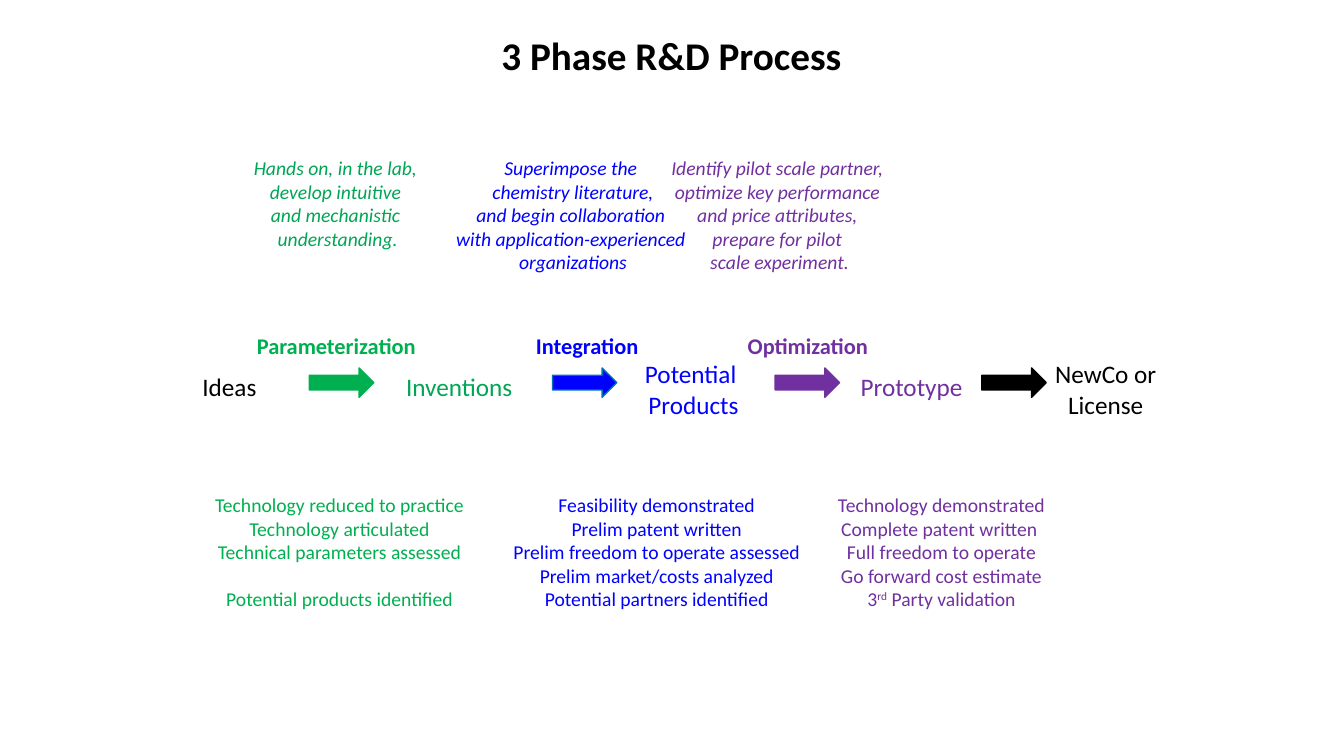
import dataclasses

import pptx
import pptx.dml.color
import pptx.enum.shapes
import pptx.enum.text
import pptx.oxml
import pptx.oxml.ns
import pptx.util

Pt = pptx.util.Pt
ALIGN = pptx.enum.text.PP_ALIGN
ANCHOR = pptx.enum.text.MSO_ANCHOR


@dataclasses.dataclass(frozen=True)
class Theme:
    font: str = "Calibri"
    black: str = "000000"
    green: str = "00B050"
    teal: str = "00A555"
    blue: str = "0000FF"
    edge: str = "0070C0"
    purple: str = "7030A0"
    title: int = 28
    stage: int = 18
    phase: int = 16
    note: int = 14


THEME = Theme()


def paint(color):
    return pptx.dml.color.RGBColor.from_string(color)


# Text: each line is a string or a tuple of runs; "^" raises a run
def write(frame, lines, size, color, align=ALIGN.CENTER, bold=False,
          italic=False, wrap=False, gap=0):
    """Fill a frame; gap is the space above its last line."""
    frame.word_wrap = wrap
    frame.auto_size = pptx.enum.text.MSO_AUTO_SIZE.NONE
    frame.vertical_anchor = ANCHOR.TOP
    for i, line in enumerate(lines):
        para = frame.paragraphs[0] if i == 0 else frame.add_paragraph()
        para.alignment = align
        last = i == len(lines) - 1
        para.space_before = Pt(gap if last else 0)
        for part in (line,) if isinstance(line, str) else line:
            run = para.add_run()
            run.text = part.lstrip("^")
            font = run.font
            font.name, font.size = THEME.font, Pt(size)
            font.bold, font.italic = bold, italic
            font.color.rgb = paint(color)
            if part.startswith("^"):
                run._r.get_or_add_rPr().set("baseline", "30000")


def place(shape, left, top, width, height):
    shape.left, shape.top = Pt(left), Pt(top)
    shape.width, shape.height = Pt(width), Pt(height)


def add_text(slide, box, lines, size, color, **style):
    shape = slide.shapes.add_textbox(*(Pt(n) for n in box))
    write(shape.text_frame, lines, size, color, **style)


def add_arrow(slide, left, color, edge):
    kind = pptx.enum.shapes.MSO_SHAPE.RIGHT_ARROW
    arrow = slide.shapes.add_shape(kind, Pt(left), Pt(262.8), Pt(46), Pt(21))
    arrow.shadow.inherit = False
    arrow.fill.solid()
    arrow.fill.fore_color.rgb = paint(color)
    arrow.line.color.rgb = paint(edge)
    arrow.line.width = Pt(1)


def set_title(slide, text):
    title = slide.shapes.title
    place(title, 121.7, 22.3, 715.7, 20.2)
    write(title.text_frame, [text], THEME.title, THEME.black,
          bold=True, wrap=True)
    title.text_frame.paragraphs[0].line_spacing = 0.9


def set_list(holder, left, width, lines, color, gap=0):
    place(holder, left, 348.5, width, 92)
    write(holder.text_frame, lines, THEME.note, color, gap=gap)
    # Plain lines: no bullet and no indent
    for para in holder.text_frame.paragraphs:
        props = para._p.get_or_add_pPr()
        props.set("marL", "0")
        props.set("indent", "0")
        props.append(pptx.oxml.parse_xml(
            f"<a:buNone {pptx.oxml.ns.nsdecls('a')}/>"))


# Content: left, width, lines, colour
NOTES = [
    (173.5, 135.4, ["Hands on, in the lab, ", "develop intuitive ",
                    "and mechanistic ", "understanding."], THEME.teal),
    (317.5, 183.6, ["Superimpose the ", "chemistry literature,",
                    "and begin collaboration ",
                    "with application-experienced ", "organizations"],
     THEME.blue),
    (471.6, 170.6, ["Identify pilot scale partner, ",
                    "optimize key performance ", "and price attributes, ",
                    "prepare for pilot ", "scale experiment."],
     THEME.purple),
]
PHASES = [
    (176.4, 129.6, ["Parameterization"], THEME.green),
    (375.8, 88.6, ["Integration"], THEME.blue),
    (527, 101.5, ["Optimization"], THEME.purple),
]
STAGES = [
    (137.5, 53.3, ["Ideas"], THEME.black),
    (283, 91.4, ["Inventions"], THEME.teal),
    (452.9, 85, ["Potential ", "Products"], THEME.blue),
    (607.7, 87.8, ["Prototype"], THEME.purple),
    (745.9, 87.8, ["NewCo or", "License"], THEME.black),
]
ARROWS = [
    (221, THEME.green, THEME.green),
    (394.6, THEME.blue, THEME.edge),
    (553.7, THEME.purple, THEME.purple),
    (701.3, THEME.black, THEME.black),
]
RESULTS = [
    (145.4, 194.4, ["Technology reduced to practice",
                    "Technology articulated",
                    "Technical parameters assessed",
                    "Potential products identified"], THEME.green, 17),
    (358.6, 221, ["Feasibility demonstrated", "Prelim patent written",
                  "Prelim freedom to operate assessed",
                  "Prelim market/costs analyzed",
                  "Potential partners identified"], THEME.blue),
    (590.4, 164.2, ["Technology demonstrated", "Complete patent written ",
                    "Full freedom to operate", "Go forward cost estimate",
                    ("3", "^rd", " Party validation")], THEME.purple),
]


def main():
    deck = pptx.Presentation()
    deck.slide_width, deck.slide_height = Pt(960), Pt(540)
    slide = deck.slides.add_slide(deck.slide_layouts.get_by_name("Comparison"))
    set_title(slide, "3 Phase R&D Process")

    # Results of each phase; the spare placeholder goes
    *holders, spare = list(slide.placeholders)[1:5]
    for holder, result in zip(holders, RESULTS):
        set_list(holder, *result)
    spare._element.getparent().remove(spare._element)

    # Notes above the flow
    for left, width, lines, color in NOTES:
        add_text(slide, (left, 108, width, 92), lines, THEME.note, color,
                 italic=True)

    # Flow of stages, arrows and phase names
    for left, width, lines, color in PHASES:
        add_text(slide, (left, 234, width, 26.6), lines, THEME.phase, color,
                 align=ALIGN.LEFT, bold=True)
    for left, width, lines, color in STAGES:
        top, high = (261.4, 29) if len(lines) == 1 else (252.7, 51)
        align = ALIGN.LEFT if len(lines) == 1 else ALIGN.CENTER
        add_text(slide, (left, top, width, high), lines, THEME.stage, color,
                 align=align)
    for arrow in ARROWS:
        add_arrow(slide, *arrow)

    deck.save("out.pptx")


if __name__ == "__main__":
    main()
